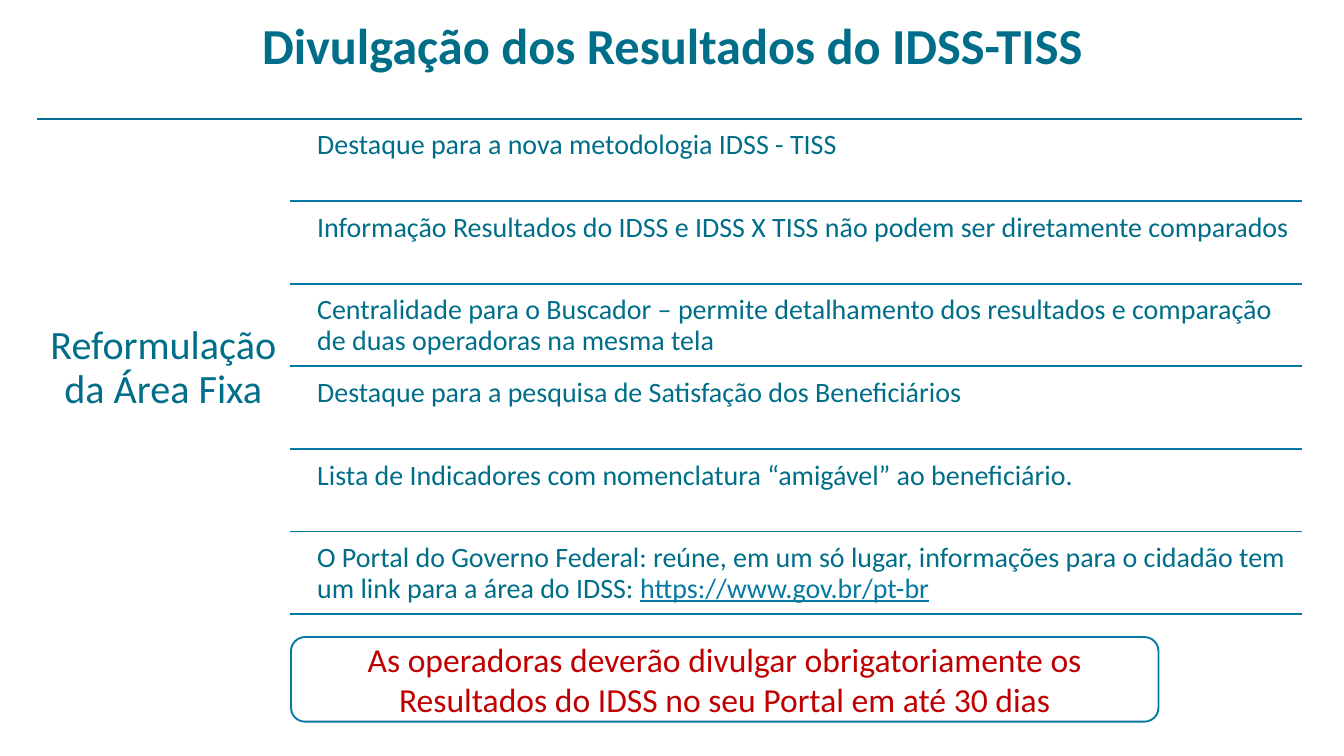
"""Build the slide on the release of the IDSS-TISS results."""
from dataclasses import dataclass

from lxml.etree import SubElement
from pptx import Presentation
from pptx.dml.color import RGBColor
from pptx.enum.shapes import MSO_CONNECTOR, MSO_SHAPE
from pptx.enum.text import MSO_ANCHOR, PP_ALIGN
from pptx.oxml.ns import qn
from pptx.slide import Slide
from pptx.text.text import TextFrame
from pptx.util import Emu, Pt

SCALE = 9144


@dataclass(frozen=True)
class Theme:
    font: str = "Calibri"
    ink: str = "006E89"
    rule: str = "0679A3"
    top_rule: str = "056E94"
    alert: str = "C00000"
    paper: str = "FFFFFF"
    title: int = 54
    side: int = 43
    note: int = 36
    body: int = 30
    line: int = 2


@dataclass(frozen=True)
class Box:
    left: int
    top: int
    width: int
    height: int

    def emu(self) -> tuple[Emu, ...]:
        return tuple(px(n) for n in (self.left, self.top, self.width, self.height))


@dataclass(frozen=True)
class Style:
    size: int
    color: str
    bold: bool = False
    align: PP_ALIGN = PP_ALIGN.CENTER
    anchor: MSO_ANCHOR = MSO_ANCHOR.TOP
    pad_x: int = 10
    pad_y: int = 5
    space: float = 1.0


@dataclass(frozen=True)
class Row:
    text: str
    link: str = ""


THEME = Theme()
RIGHT = 1937
RULE_LEFT = 431
ROW_LEFT = 460
ROW_TOP = 182
ROW_HIGH = 117
PITCH = 123

HEAD = Style(THEME.title, THEME.ink, bold=True)
SIDE = Style(THEME.side, THEME.ink, anchor=MSO_ANCHOR.MIDDLE, pad_x=18, pad_y=18, space=0.9)
BODY = Style(THEME.body, THEME.ink, align=PP_ALIGN.LEFT, pad_x=12, pad_y=12, space=0.9)
NOTE = Style(THEME.note, THEME.alert, anchor=MSO_ANCHOR.MIDDLE)

ROWS = [
    Row("Destaque para a nova metodologia IDSS - TISS"),
    Row("Informação Resultados do IDSS e IDSS X TISS não podem ser diretamente comparados"),
    Row("Centralidade para o Buscador – permite detalhamento dos resultados e comparação "
        "de duas operadoras na mesma tela"),
    Row("Destaque para a pesquisa de Satisfação dos Beneficiários"),
    Row("Lista de Indicadores com nomenclatura “amigável” ao beneficiário."),
    Row("O Portal do Governo Federal: reúne, em um só lugar, informações para o cidadão "
        "tem um link para a área do IDSS: ", "https://www.gov.br/pt-br"),
]


def px(count: int) -> Emu:
    return Emu(count * SCALE)


def rgb(color: str) -> RGBColor:
    return RGBColor.from_string(color)


def write(frame: TextFrame, row: Row, style: Style) -> None:
    frame.word_wrap = True
    frame.vertical_anchor = style.anchor
    frame.margin_left = frame.margin_right = px(style.pad_x)
    frame.margin_top = frame.margin_bottom = px(style.pad_y)
    frame.text = row.text
    para = frame.paragraphs[0]
    para.alignment = style.align
    para.line_spacing = style.space
    if row.link:
        para.add_run().text = row.link
    for run in para.runs:
        run.font.name = THEME.font
        run.font.size = Pt(style.size)
        run.font.bold = style.bold
        run.font.color.rgb = rgb(style.color)
    if row.link:
        link = para.runs[-1].font
        link.underline = True
        link.color.rgb = rgb(THEME.rule)


def label(slide: Slide, box: Box, row: Row, style: Style) -> None:
    write(slide.shapes.add_textbox(*box.emu()).text_frame, row, style)


def rule(slide: Slide, left: int, top: int, color: str) -> None:
    line = slide.shapes.add_connector(
        MSO_CONNECTOR.STRAIGHT, px(left), px(top), px(RIGHT), px(top))
    line.line.color.rgb = rgb(color)
    line.line.width = Pt(THEME.line)
    SubElement(line._element.spPr, qn("a:effectLst"))


def panel(slide: Slide, box: Box, row: Row, style: Style) -> None:
    shape = slide.shapes.add_shape(MSO_SHAPE.ROUNDED_RECTANGLE, *box.emu())
    shape.shadow.inherit = False
    shape.fill.solid()
    shape.fill.fore_color.rgb = rgb(THEME.paper)
    shape.line.color.rgb = rgb(THEME.rule)
    shape.line.width = Pt(THEME.line)
    write(shape.text_frame, row, style)


def main() -> None:
    deck = Presentation()
    deck.slide_width, deck.slide_height = px(2000), px(1125)
    slide = deck.slides.add_slide(deck.slide_layouts[6])
    label(slide, Box(101, 16, 1800, 188), Row("Divulgação dos Resultados do IDSS-TISS"), HEAD)
    rule(slide, 55, 177, THEME.top_rule)
    label(slide, Box(55, 177, 376, 743), Row("Reformulação da Área Fixa"), SIDE)
    for index, row in enumerate(ROWS):
        top = ROW_TOP + index * PITCH
        label(slide, Box(ROW_LEFT, top, RIGHT - ROW_LEFT, ROW_HIGH), row, BODY)
        rule(slide, RULE_LEFT, top + ROW_HIGH, THEME.rule)
    panel(slide, Box(433, 948, 1291, 126), Row(
        "As operadoras deverão divulgar obrigatoriamente os Resultados do IDSS "
        "no seu Portal em até 30 dias"), NOTE)
    deck.save("out.pptx")


if __name__ == "__main__":
    main()
